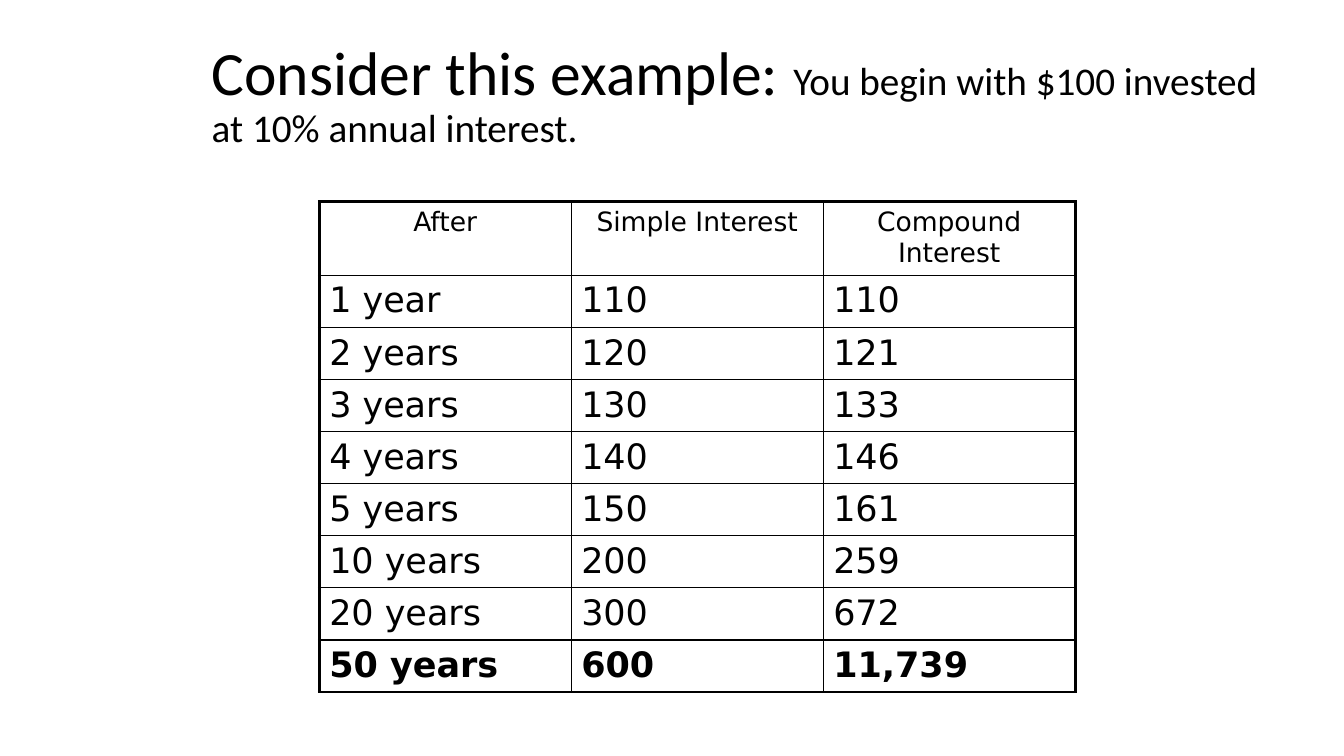
from lxml import etree
from pptx import Presentation
from pptx import util as u
from pptx.dml.color import RGBColor
from pptx.enum import text
from pptx.oxml.ns import qn

PX = 7620  # EMU in one px, 120 px to the inch
HUES = {"ink": "000000"}
THIN, THICK = 1, 2.25

HEAD = ["After", "Simple Interest", "Compound Interest"]
ROWS = [
    ["1 year", "110", "110"],
    ["2 years", "120", "121"],
    ["3 years", "130", "133"],
    ["4 years", "140", "146"],
    ["5 years", "150", "161"],
    ["10 years", "200", "259"],
    ["20 years", "300", "672"],
    ["50 years", "600", "11,739"],
]


def px(n):
    return u.Emu(n * PX)


def write(para, words, size, face="DejaVu Sans", bold=False,
          align=text.PP_ALIGN.LEFT, hue="ink"):
    para.alignment = align
    run = para.add_run()
    run.text = words
    font = run.font
    font.size, font.name, font.bold = u.Pt(size), face, bold
    font.color.rgb = RGBColor.from_string(HUES[hue])


def edge(cell, side, width):
    line = etree.SubElement(cell._tc.get_or_add_tcPr(), qn("a:ln" + side),
                            w=str(u.Pt(width)))
    fill = etree.SubElement(line, qn("a:solidFill"))
    etree.SubElement(fill, qn("a:srgbClr"), val=HUES["ink"])


def title(slide):
    box = slide.shapes.title
    box.left, box.top, box.width, box.height = map(px, (240, 40, 1279, 150))
    frame = box.text_frame
    frame.auto_size = text.MSO_AUTO_SIZE.NONE
    frame.vertical_anchor = text.MSO_ANCHOR.MIDDLE
    para = frame.paragraphs[0]
    para.line_spacing = 0.9
    write(para, "Consider this example: ", 44, face="Calibri")
    write(para, "You begin with $100 invested at 10% annual interest.", 28,
          face="Calibri")


def table(slide, left, top, wide, head, deep):
    data = [HEAD] + ROWS
    last = len(HEAD) - 1
    grid = slide.shapes.add_table(
        len(data), len(HEAD), px(left), px(top),
        px(wide * len(HEAD)), px(head + deep * len(ROWS))).table
    grid.first_row = grid.horz_banding = False
    for col in grid.columns:
        col.width = px(wide)
    for r, row in enumerate(data):
        grid.rows[r].height = px(deep if r else head)
        for c, words in enumerate(row):
            cell = grid.cell(r, c)
            # Thick rules on the outer left, right and top
            edge(cell, "L", THIN if c else THICK)
            edge(cell, "R", THICK if c == last else THIN)
            edge(cell, "T", THIN if r else THICK)
            edge(cell, "B", THIN)
            cell.fill.background()
            para = cell.text_frame.paragraphs[0]
            if r:
                write(para, words, 25, bold=r == len(ROWS))
            else:
                write(para, words, 19, align=text.PP_ALIGN.CENTER)


def main():
    deck = Presentation()
    deck.slide_width, deck.slide_height = px(1600), px(900)
    slide = deck.slides.add_slide(deck.slide_layouts.get_by_name("Title Only"))
    # Heading
    title(slide)
    # Interest table
    table(slide, left=380, top=240, wide=300, head=88, deep=62)
    deck.save("out.pptx")


if __name__ == "__main__":
    main()
